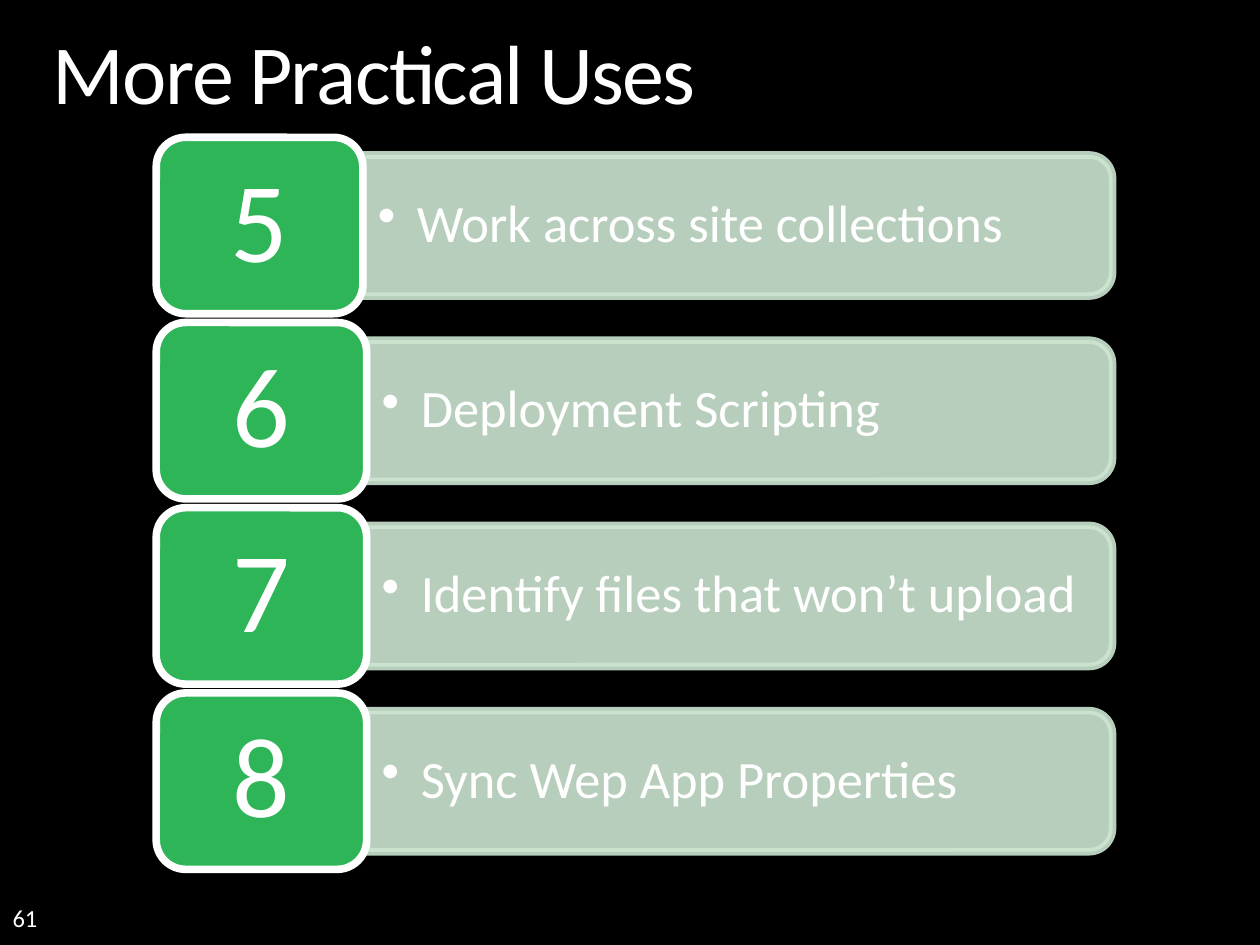
import pptx
import pptx.dml.color
import pptx.enum.shapes
import pptx.enum.text
import pptx.oxml.ns
import pptx.util
from lxml import etree

Inches = pptx.util.Inches
Pt = pptx.util.Pt
Shape = pptx.enum.shapes.MSO_SHAPE
Anchor = pptx.enum.text.MSO_ANCHOR
Align = pptx.enum.text.PP_ALIGN

WHITE, BLACK, GREEN, PALE = "FFFFFF", "000000", "2DB557", "CDE5D1"

USES = [
    ("5", "Work across site collections"),
    ("6", "Deployment Scripting"),
    ("7", "Identify files that won’t upload"),
    ("8", "Sync Wep App Properties"),
]


def color(value):
    return pptx.dml.color.RGBColor.from_string(value)


def child(parent, tag, **attributes):
    return etree.SubElement(parent, pptx.oxml.ns.qn(tag), **attributes)


class Deck:
    font = "Calibri"
    border = Pt(4.33)

    def __init__(self, slide):
        self.slide = slide
        slide.background.fill.solid()
        slide.background.fill.fore_color.rgb = color(BLACK)

    def set_text(self, shape, text, size, anchor, margins=(0, 0), align=Align.LEFT,
                 spacing=0.9, bullet_indent=None):
        """Fill a shape with one white paragraph; margins are (side, top and bottom)."""
        frame = shape.text_frame
        side, edge = (Inches(margin) for margin in margins)
        frame_format = {
            "word_wrap": True, "vertical_anchor": anchor,
            "margin_left": side, "margin_right": side,
            "margin_top": edge, "margin_bottom": edge,
        }
        for name, value in frame_format.items():
            setattr(frame, name, value)
        frame.text = text
        paragraph = frame.paragraphs[0]
        paragraph.alignment = align
        paragraph.line_spacing = spacing
        if bullet_indent:
            properties = paragraph._p.get_or_add_pPr()
            properties.set("marL", str(Inches(bullet_indent)))
            properties.set("indent", str(-Inches(bullet_indent)))
            child(properties, "a:buChar", char="•")
        font = paragraph.runs[0].font
        for name, value in {"name": self.font, "size": Pt(size), "bold": False}.items():
            setattr(font, name, value)
        font.color.rgb = color(WHITE)

    def title(self, text):
        heading = self.slide.shapes.title
        place = {"left": 0.42, "top": 0.25, "width": 9.16, "height": 0.73}
        for name, value in place.items():
            setattr(heading, name, Inches(value))
        self.set_text(heading, text, 48, Anchor.TOP)
        run = heading.text_frame.paragraphs[0].runs[0]
        run._r.get_or_add_rPr().set("spc", "-100")

    def text(self, box, text, size, anchor, **options):
        frame = self.slide.shapes.add_textbox(*map(Inches, box))
        self.set_text(frame, text, size, anchor, **options)

    def block(self, preset, box, fill, line, opacity=None):
        shape = self.slide.shapes.add_shape(preset, *map(Inches, box))
        shape.shadow.inherit = False
        shape.fill.solid()
        shape.fill.fore_color.rgb = color(fill)
        shape.line.color.rgb = color(line)
        shape.line.width = self.border
        if opacity:
            for tint in shape._element.spPr.iter(pptx.oxml.ns.qn("a:srgbClr")):
                child(tint, "a:alpha", val=str(opacity * 1000))
        return shape

    def bar(self, left, top, width, height):
        """Draw a bar rounded at its right end: an upright shape turned by 90 degrees."""
        upright = (left + (width - height) / 2, top + (height - width) / 2, height, width)
        shape = self.block(Shape.ROUND_2_SAME_RECTANGLE, upright, PALE, PALE, opacity=90)
        shape.rotation = 90

    def badge(self, box, number):
        shape = self.block(Shape.ROUNDED_RECTANGLE, box, GREEN, WHITE)
        self.set_text(shape, number, 65, Anchor.MIDDLE, margins=(0.27, 0.14),
                      align=Align.CENTER)


def main():
    deck_file = pptx.Presentation()
    deck_file.slide_width, deck_file.slide_height = Inches(10), Inches(7.5)
    deck = Deck(deck_file.slides.add_slide(deck_file.slide_layouts[5]))

    deck.text((0.1, 7, 2.33, 0.4), "61", 14, Anchor.BOTTOM, spacing=1.0)
    deck.title("More Practical Uses")

    left, right, first_top, pitch = 1.24, 8.83, 1.09, 1.47
    badge_height, bar_height, text_height = 1.4, 1.12, 1.01
    for row, (number, use) in enumerate(USES):
        top = first_top + row * pitch
        middle = top + badge_height / 2
        badge_width = 1.67 if row else 1.64
        bar_left = left + badge_width
        bar_width = right - bar_left
        deck.bar(bar_left, middle - bar_height / 2, bar_width, bar_height)
        deck.text((bar_left, middle - text_height / 2, bar_width - 0.05, text_height),
                  use, 30, Anchor.MIDDLE, margins=(0.12, 0.06), bullet_indent=0.31)
        deck.badge((left, top, badge_width, badge_height), number)

    deck_file.save("out.pptx")


if __name__ == "__main__":
    main()
